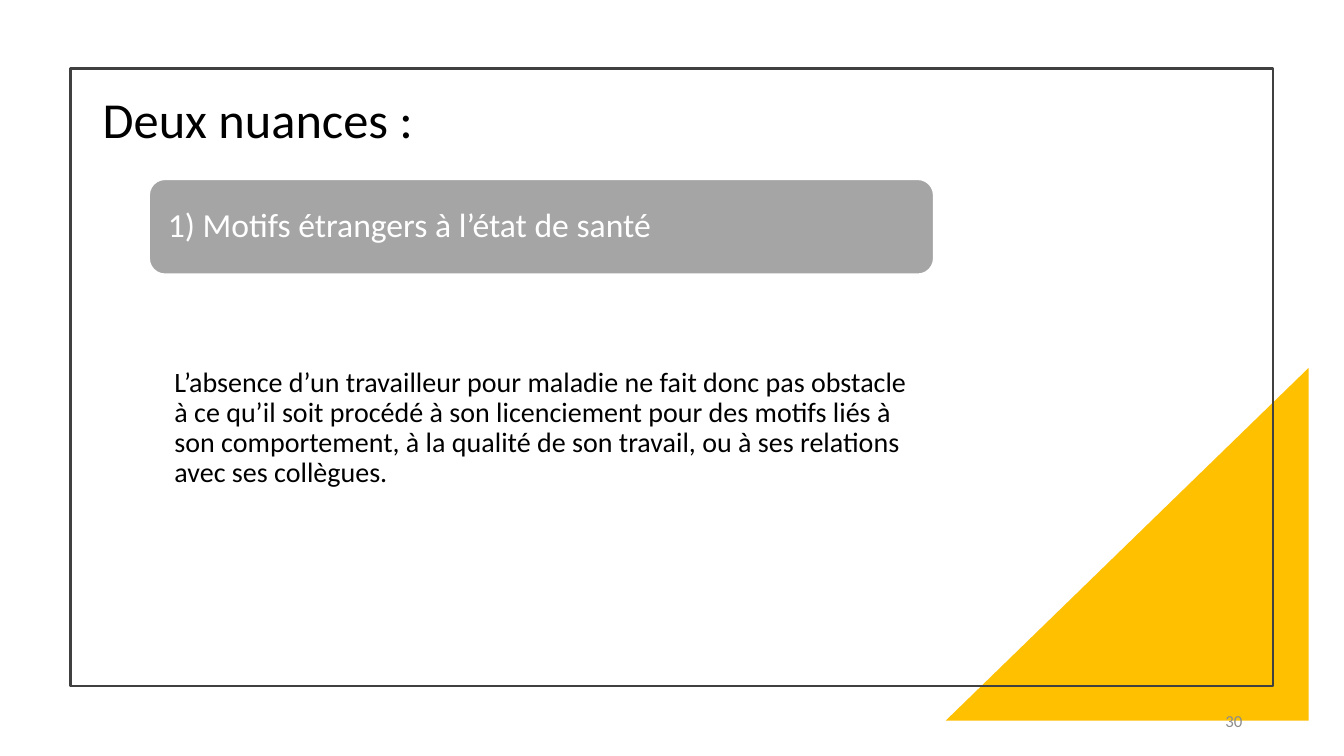
from pptx import Presentation
from pptx.dml.color import RGBColor
from pptx.enum.shapes import MSO_SHAPE
from pptx.enum.text import MSO_ANCHOR, PP_ALIGN
from pptx.util import Pt

PX = 9144  # EMU per px, 100 px to the inch
AMBER = RGBColor(0xFF, 0xC0, 0x00)
DARK = RGBColor(0x40, 0x40, 0x40)
GREY = RGBColor(0xA5, 0xA5, 0xA5)
PALE = RGBColor(0x8C, 0x8C, 0x8C)
WHITE = RGBColor(0xFF, 0xFF, 0xFF)
BLACK = RGBColor(0x00, 0x00, 0x00)

prs = Presentation()
prs.slide_width, prs.slide_height = 1333 * PX, 750 * PX
slide = prs.slides.add_slide(prs.slide_layouts[6])


def add_shape(kind, box, fill=None, line=None, width=1):
    s = slide.shapes.add_shape(kind, *(v * PX for v in box))
    s.shadow.inherit = False
    if fill is None:
        s.fill.background()
    else:
        s.fill.solid()
        s.fill.fore_color.rgb = fill
    if line is None:
        s.line.fill.background()
    else:
        s.line.color.rgb = line
        s.line.width = Pt(width)
    return s


def write(s, text, size, color, frame, para):
    tf = s.text_frame
    tf.word_wrap = True
    for name, value in frame.items():
        setattr(tf, name, value)
    p = tf.paragraphs[0]
    for name, value in para.items():
        setattr(p, name, value)
    r = p.add_run()
    r.text = text
    r.font.name, r.font.size = "Calibri", Pt(size)
    r.font.color.rgb = color


# Corner triangle and frame
triangle = add_shape(MSO_SHAPE.RIGHT_TRIANGLE, (938, 365, 360, 350), AMBER)
triangle._element.spPr.xfrm.set("flipH", "1")
add_shape(MSO_SHAPE.RECTANGLE, (70, 68, 1193, 613), line=DARK, width=1.5)

# Heading bar
bar = add_shape(MSO_SHAPE.ROUNDED_RECTANGLE, (148, 178, 778, 94), GREY, WHITE)
write(bar, "1) Motifs étrangers à l’état de santé", 24, WHITE,
      {"margin_left": 14 * PX, "margin_right": 14 * PX,
       "vertical_anchor": MSO_ANCHOR.MIDDLE},
      {"alignment": PP_ALIGN.LEFT, "line_spacing": 0.9})

# Text boxes: body, title, slide number
texts = [
    ((148, 362, 778, 166),
     "L’absence d’un travailleur pour maladie ne fait donc pas obstacle à ce "
     "qu’il soit procédé à son licenciement pour des motifs liés à son "
     "comportement, à la qualité de son travail, ou à ses relations avec ses "
     "collègues.", 20, BLACK,
     {"margin_left": 25 * PX, "margin_right": 16 * PX,
      "margin_top": 3 * PX, "margin_bottom": 3 * PX},
     {"line_spacing": 0.9}),
    ((92, 82, 688, 71), "Deux nuances :", 36, BLACK, {}, {}),
    ((942, 695, 300, 40), "30", 12, PALE,
     {"vertical_anchor": MSO_ANCHOR.MIDDLE}, {"alignment": PP_ALIGN.RIGHT}),
]
for box, *content in texts:
    write(slide.shapes.add_textbox(*(v * PX for v in box)), *content)

prs.save("out.pptx")
